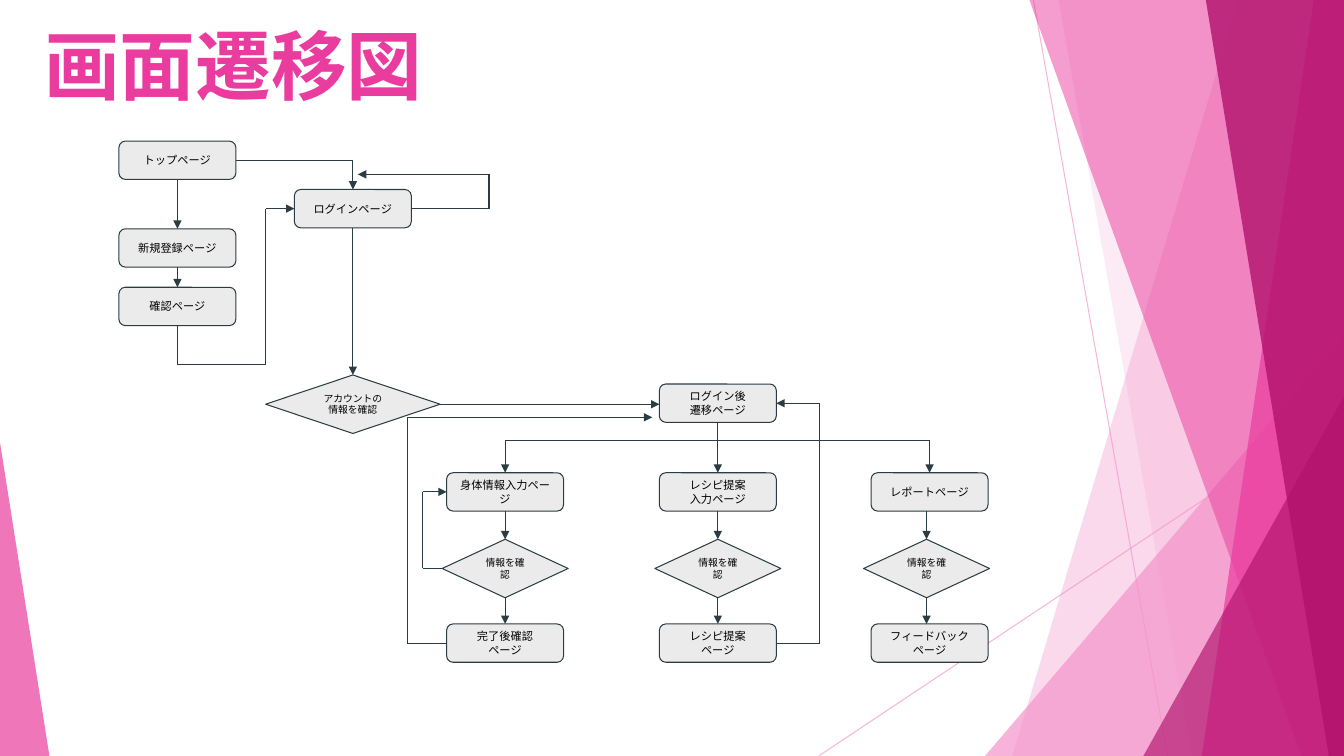
from typing import NamedTuple

from lxml.etree import SubElement
from pptx import Presentation
from pptx.dml.color import RGBColor
from pptx.enum.shapes import MSO_CONNECTOR, MSO_SHAPE
from pptx.enum.text import MSO_ANCHOR, PP_ALIGN
from pptx.oxml.ns import qn
from pptx.util import Inches, Pt

COLORS = {"pale": "F496CB", "pink": "EA3C9E", "deep": "B2126C",
          "node": "EBEBEB", "ink": "2C3C43", "text": "000000"}
FONT = "Arial"


class Box(NamedTuple):
    left: float
    top: float
    width: float
    height: float

    @property
    def right(self):
        return self.left + self.width

    @property
    def bottom(self):
        return self.top + self.height

    @property
    def middle_x(self):
        return self.left + self.width / 2

    @property
    def middle_y(self):
        return self.top + self.height / 2

    def inches(self):
        return [Inches(value) for value in self]


# ---- Shared drawing helpers ----
def paint(color_format, name, opacity=100):
    color_format.solid()
    color_format.fore_color.rgb = RGBColor.from_string(COLORS[name])
    if opacity < 100:
        color = color_format._xPr.find(qn("a:solidFill"))[0]
        SubElement(color, qn("a:alpha"), val=str(opacity * 1000))


def add_line(page, start, end, color, opacity=100, arrow=False):
    points = [Inches(value) for value in (*start, *end)]
    line = page.shapes.add_connector(MSO_CONNECTOR.STRAIGHT, *points)
    line.line.width = Pt(0.75)
    paint(line.line.fill, color, opacity)
    if arrow:
        SubElement(line.line._get_or_add_ln(), qn("a:tailEnd"), type="triangle")
    SubElement(line._element.spPr, qn("a:effectLst"))


def write(frame, lines, alignment, font_format, color):
    frame.word_wrap = True
    for side in ("left", "top", "right", "bottom"):
        setattr(frame, f"margin_{side}", Inches(0.1))
    for index, text in enumerate(lines):
        para = frame.paragraphs[0] if index == 0 else frame.add_paragraph()
        para.alignment = alignment
        span = para.add_run()
        span.text = text
        for name, value in {"name": FONT, **font_format}.items():
            setattr(span.font, name, value)
        span.font.color.rgb = RGBColor.from_string(COLORS[color])
        SubElement(span.font._element, qn("a:ea"), typeface=FONT)


# ---- Pink facets at both edges ----
def add_facets(page, box):
    def band(top_x, bottom_x, color, opacity):
        corners = [(top_x, box.top), (box.right, box.top),
                   (box.right, box.bottom), (bottom_x, box.bottom)]
        corners = [(Inches(x), Inches(y)) for x, y in corners]
        builder = page.shapes.build_freeform(*corners[0], scale=1.0)
        builder.add_line_segments(corners[1:], close=True)
        finish(builder.convert_to_shape(), color, opacity)

    def corner(left, top, width, apex, color, opacity):
        place = Box(left, top, width, box.bottom - top)
        shape = page.shapes.add_shape(MSO_SHAPE.ISOSCELES_TRIANGLE, *place.inches())
        shape.adjustments[0] = apex
        finish(shape, color, opacity)

    def finish(shape, color, opacity):
        shape.shadow.inherit = False
        paint(shape.fill, color, opacity)
        shape.line.fill.background()

    right = box.right
    add_line(page, (right - 3.08, box.top), (right - 1.75, box.bottom), "pale", 70)
    add_line(page, (right, box.top + 4.03), (right - 5.21, box.bottom), "pale", 70)
    band(right - 1.05, right - 3.29, "pale", 36)
    band(right - 2.83, right - 1.51, "pale", 20)
    corner(right - 3.56, box.top + 3.33, 3.56, 1, "pale", 72)
    band(right - 3.12, right - 0.42, "pink", 50)
    band(right - 0.3, right - 1.41, "pink", 70)
    band(right - 1.37, right - 0.15, "deep", 80)
    corner(right - 1.99, box.top + 3.93, 1.99, 1, "deep", 66)
    corner(box.left, box.top + 4.39, 0.49, 0, "pink", 70)


# ---- Title ----
def add_title(page, box):
    frame = page.shapes.add_textbox(*box.inches()).text_frame
    write(frame, ["画面遷移図"], PP_ALIGN.LEFT, {"size": Pt(54), "bold": True}, "pink")


# ---- Screen flow ----
def add_flow(page, box):
    def node(x, y, *lines, width=1.16, height=0.38,
             kind=MSO_SHAPE.ROUNDED_RECTANGLE, size=8):
        place = Box(box.left + x - width / 2, box.top + y - height / 2, width, height)
        shape = page.shapes.add_shape(kind, *place.inches())
        shape.shadow.inherit = False
        paint(shape.fill, "node")
        paint(shape.line.fill, "ink")
        shape.line.width = Pt(0.75)
        shape.text_frame.vertical_anchor = MSO_ANCHOR.MIDDLE
        write(shape.text_frame, lines, PP_ALIGN.CENTER, {"size": Pt(size)}, "text")
        return place

    def decision(x, y, text, width=1.25):
        return node(x, y, text, width=width, height=0.58,
                    kind=MSO_SHAPE.FLOWCHART_DECISION, size=7)

    def route(*points):
        for index in range(1, len(points)):
            add_line(page, points[index - 1], points[index], "ink",
                     arrow=index == len(points) - 1)

    def down(upper, lower):
        x = min(upper.middle_x, lower.middle_x)
        route((x, upper.bottom), (x, lower.top))

    # Entry and login
    entry_x, login_x = 0.58, 2.32
    top = node(entry_x, 0.19, "トップページ")
    login = node(login_x, 0.67, "ログインページ")
    register = node(entry_x, 1.06, "新規登録ページ")
    confirm = node(entry_x, 1.64, "確認ページ")
    account = decision(login_x, 2.61, "アカウントの情報を確認", width=1.73)

    # Three branches after login
    input_y, check_y, result_y = 3.48, 4.24, 4.98
    home = node(5.94, 2.6, "ログイン後", "遷移ページ")
    branches = [
        (3.83, 3.83, ["身体情報入力ページ"], ["完了後確認", "ページ"]),
        (5.94, 5.94, ["レシピ提案", "入力ページ"], ["レシピ提案", "ページ"]),
        (8.04, 8.01, ["レポートページ"], ["フィードバックページ"]),
    ]
    steps = [(node(x, input_y, *first), decision(check_x, check_y, "情報を確認"),
              node(x, result_y, *last)) for x, check_x, first, last in branches]
    (body, body_check, body_done), (recipe, _, recipe_done), (report, _, _) = steps

    # Straight arrows
    pairs = [(top, register), (register, confirm), (login, account), (home, recipe)]
    for first, check, last in steps:
        pairs += [(first, check), (check, last)]
    for upper, lower in pairs:
        down(upper, lower)
    route((account.right, account.middle_y), (home.left, account.middle_y))

    # Bent arrows around the login page
    route((top.right, top.middle_y), (login.middle_x, top.middle_y),
          (login.middle_x, login.top))
    turn_x, turn_y = account.left, confirm.bottom + 0.39
    route((confirm.middle_x, confirm.bottom), (confirm.middle_x, turn_y),
          (turn_x, turn_y), (turn_x, login.middle_y), (login.left, login.middle_y))
    turn_x, turn_y = login.right + 0.77, login.top - 0.15
    route((login.right, login.middle_y), (turn_x, login.middle_y),
          (turn_x, turn_y), (login.middle_x + 0.05, turn_y))

    # Split to the outer branches
    split_y = home.bottom + 0.18
    route((report.middle_x, split_y), (body.middle_x, split_y),
          (body.middle_x, body.top))
    route((report.middle_x, split_y), (report.middle_x, report.top))

    # Returns to earlier pages
    turn_x = body_check.left - 0.19
    route((body_check.left, body_check.middle_y), (turn_x, body_check.middle_y),
          (turn_x, body.middle_y), (body.left, body.middle_y))
    turn_x, turn_y = body_done.left - 0.39, home.bottom - 0.05
    route((body_done.left, body_done.middle_y), (turn_x, body_done.middle_y),
          (turn_x, turn_y), (home.left - 0.07, turn_y))
    turn_x = home.right + 0.43
    route((recipe_done.right, recipe_done.middle_y), (turn_x, recipe_done.middle_y),
          (turn_x, home.middle_y), (home.right, home.middle_y))


def main():
    deck = Presentation()
    deck.slide_width, deck.slide_height = Inches(13.33), Inches(7.5)
    page = deck.slides.add_slide(deck.slide_layouts[6])
    add_facets(page, Box(0, 0, 13.33, 7.5))
    add_title(page, Box(0.34, 0.09, 4.09, 1.1))
    add_flow(page, Box(1.18, 1.4, 8.62, 5.17))
    deck.save("out.pptx")


if __name__ == "__main__":
    main()
